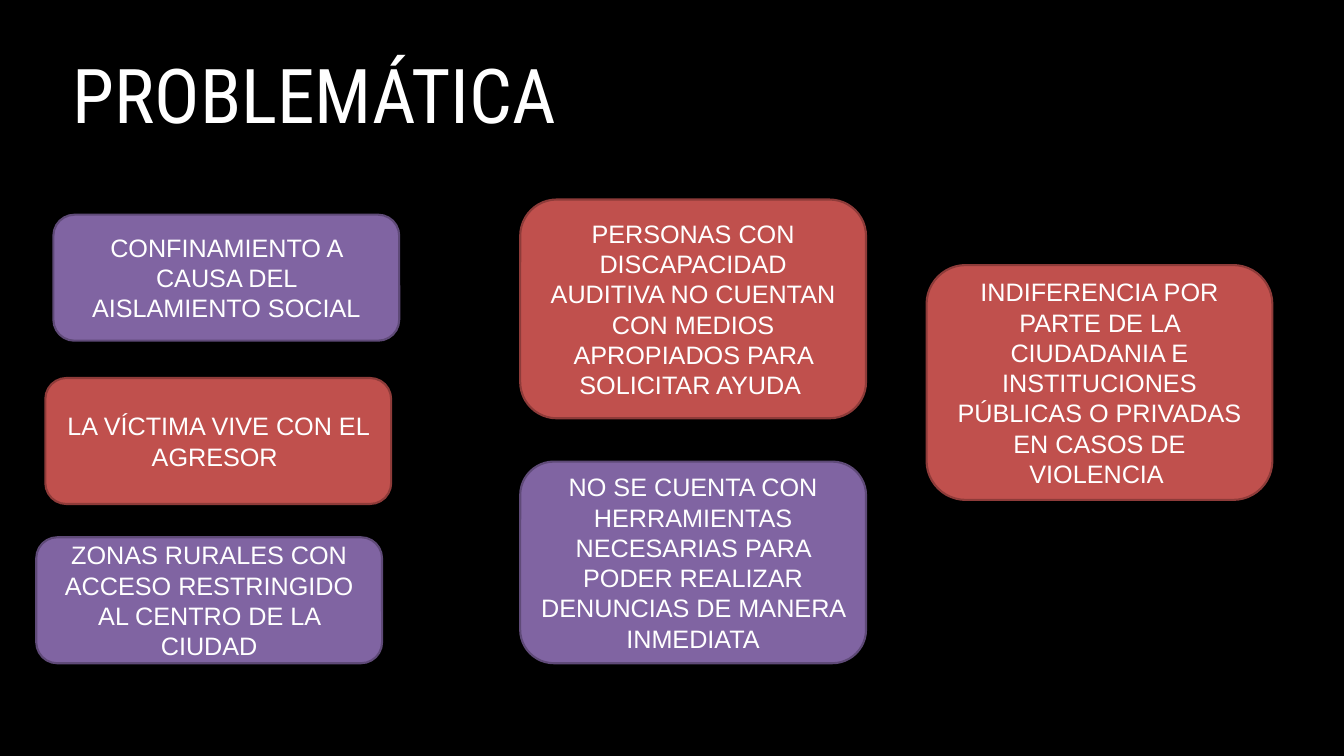
from dataclasses import dataclass

from pptx import Presentation
from pptx.dml.color import RGBColor
from pptx.enum import shapes, text
from pptx.util import Inches, Pt


@dataclass(frozen=True)
class Theme:
    background: str = "000000"
    ink: str = "FFFFFF"
    purple: tuple = ("8064A2", "5F4A78")  # fill, outline
    red: tuple = ("C0504D", "8E3B39")
    title_font: str = "Roboto Condensed"
    body_font: str = "Arial"
    title_size: int = 54
    body_size: int = 18
    outline_width: float = 1.5


class SlideBuilder:
    def __init__(self, slide, theme):
        self.slide = slide
        self.theme = theme
        fill = slide.background.fill
        fill.solid()
        fill.fore_color.rgb = RGBColor.from_string(theme.background)

    def set_text(self, shape, wording, font_name, size, alignment):
        frame = shape.text_frame
        frame.word_wrap = True
        frame.auto_size = text.MSO_AUTO_SIZE.NONE
        frame.vertical_anchor = text.MSO_ANCHOR.MIDDLE
        paragraph = frame.paragraphs[0]
        paragraph.alignment = alignment
        run = paragraph.add_run()
        run.text = wording
        run.font.name = font_name
        run.font.size = Pt(size)
        run.font.color.rgb = RGBColor.from_string(self.theme.ink)

    def title(self, wording, left, top, width, height):
        shape = self.slide.shapes.title
        shape.left, shape.top = Inches(left), Inches(top)
        shape.width, shape.height = Inches(width), Inches(height)
        frame = shape.text_frame
        frame.margin_left = frame.margin_right = Inches(0.05)
        frame.margin_top = frame.margin_bottom = Inches(0.05)
        self.set_text(shape, wording, self.theme.title_font,
                      self.theme.title_size, text.PP_ALIGN.LEFT)

    def card(self, wording, colors, left, top, width, height):
        shape = self.slide.shapes.add_shape(
            shapes.MSO_SHAPE.ROUNDED_RECTANGLE,
            Inches(left), Inches(top), Inches(width), Inches(height))
        shape.shadow.inherit = False
        fill_color, line_color = colors
        shape.fill.solid()
        shape.fill.fore_color.rgb = RGBColor.from_string(fill_color)
        shape.line.color.rgb = RGBColor.from_string(line_color)
        shape.line.width = Pt(self.theme.outline_width)
        self.set_text(shape, wording, self.theme.body_font,
                      self.theme.body_size, text.PP_ALIGN.CENTER)


def main():
    presentation = Presentation()
    presentation.slide_width = Inches(13.33)
    presentation.slide_height = Inches(7.5)
    title_only = presentation.slide_layouts[5]
    theme = Theme()
    builder = SlideBuilder(presentation.slides.add_slide(title_only), theme)
    builder.title("PROBLEMÁTICA", 0.67, 0.3, 10.89, 1.25)

    card_width = 3.43
    problems = [  # wording, colors, left, top, height
        ("CONFINAMIENTO A CAUSA DEL AISLAMIENTO SOCIAL",
         theme.purple, 0.53, 2.13, 1.25),
        ("LA VÍCTIMA VIVE CON EL AGRESOR ",
         theme.red, 0.45, 3.75, 1.25),
        ("NO SE CUENTA CON HERRAMIENTAS NECESARIAS PARA PODER REALIZAR "
         "DENUNCIAS DE MANERA INMEDIATA",
         theme.purple, 5.16, 4.58, 2),
        ("ZONAS RURALES CON ACCESO RESTRINGIDO AL CENTRO DE LA CIUDAD",
         theme.purple, 0.36, 5.33, 1.25),
        ("PERSONAS CON DISCAPACIDAD AUDITIVA NO CUENTAN CON MEDIOS "
         "APROPIADOS PARA SOLICITAR AYUDA ",
         theme.red, 5.16, 1.98, 2.17),
        ("INDIFERENCIA POR PARTE DE LA CIUDADANIA E INSTITUCIONES PÚBLICAS "
         "O PRIVADAS EN CASOS DE VIOLENCIA ",
         theme.red, 9.19, 2.63, 2.33),
    ]
    for wording, colors, left, top, height in problems:
        builder.card(wording, colors, left, top, card_width, height)

    presentation.save("out.pptx")


if __name__ == "__main__":
    main()
